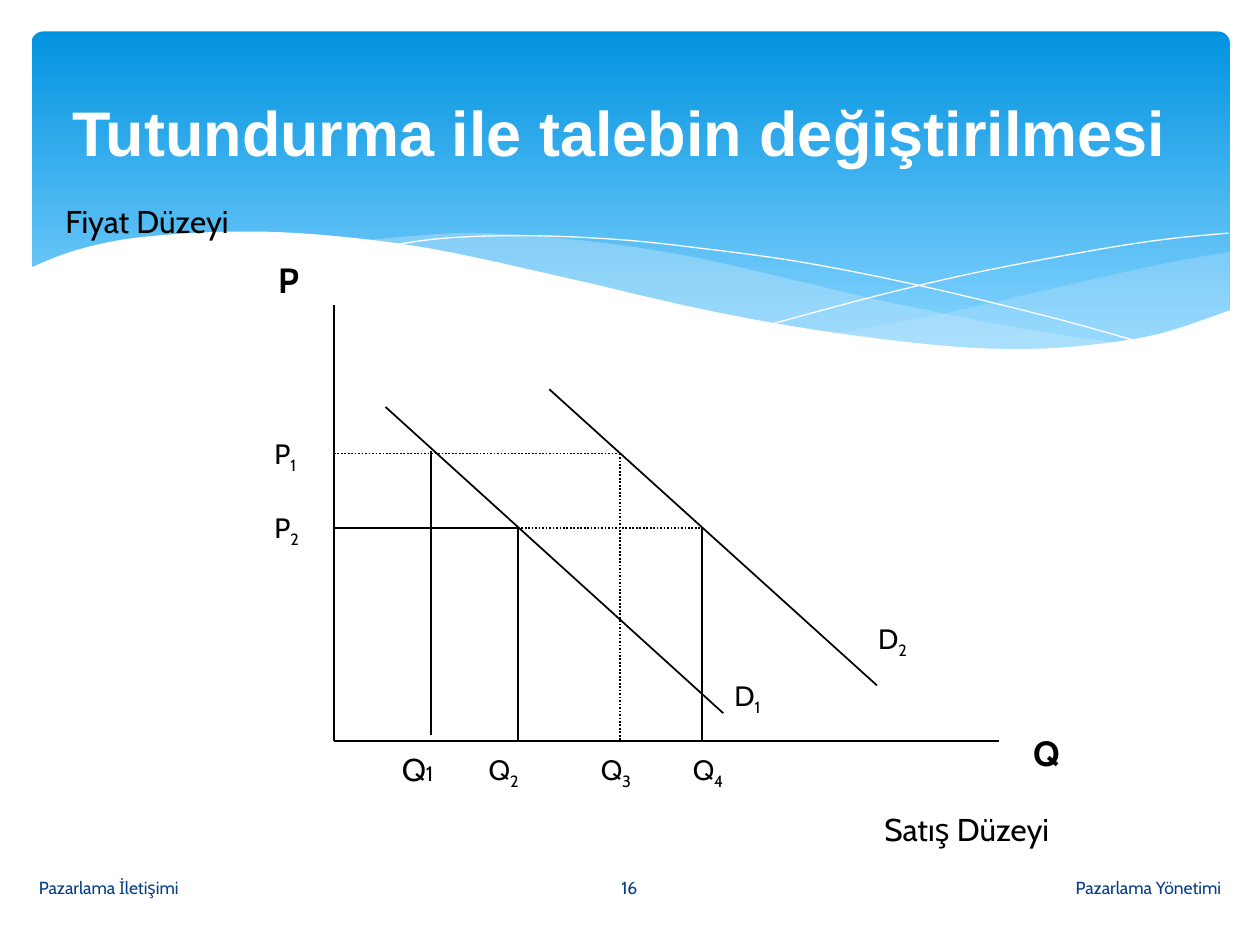
from dataclasses import dataclass
from itertools import chain

from lxml.etree import SubElement
from pptx import Presentation
from pptx.dml.color import RGBColor
from pptx.enum.dml import MSO_LINE
from pptx.enum.shapes import MSO_CONNECTOR, MSO_SHAPE
from pptx.enum.text import MSO_ANCHOR, MSO_AUTO_SIZE, PP_ALIGN
from pptx.oxml.ns import qn
from pptx.util import Inches, Pt


@dataclass(frozen=True)
class Theme:
    """Colours, fonts and type sizes of the slide."""
    white: str = "FFFFFF"
    black: str = "000000"
    sky_top: str = "0293E0"
    sky_bottom: str = "83D3FE"
    wave: str = "C6E7FC"
    footer: str = "073E87"
    title_font: str = "Arial"
    body_font: str = "Cabin"
    title_size: int = 36
    axis_size: int = 20
    caption_size: int = 18
    label_size: int = 16
    small_size: int = 12
    footer_size: int = 10


def set_all(target, values):
    """Set every attribute in the values dict."""
    for name, value in values.items():
        setattr(target, name, value)


def smooth(knots, steps=6):
    """Return points of a Catmull-Rom curve through the knots."""
    padded = [knots[0], *knots, knots[-1]]
    points = [knots[0]]
    for a, b, c, d in zip(padded, padded[1:], padded[2:], padded[3:]):
        for step in range(1, steps + 1):
            t = step / steps
            points.append(tuple(
                0.5 * (2 * q + (r - p) * t + (2 * p - 5 * q + 4 * r - s) * t**2
                       + (3 * q - p - 3 * r + s) * t**3)
                for p, q, r, s in zip(a, b, c, d)))
    return points


class SlideBuilder:
    """Holds the theme and the current slide."""

    def __init__(self, presentation, theme):
        """Add a title-only slide."""
        self.theme = theme
        self.slide = presentation.slides.add_slide(presentation.slide_layouts[5])
        self.shapes = self.slide.shapes

    def style_run(self, run, size, color, font, bold=False):
        """Format one run."""
        set_all(run.font, {"size": Pt(size), "name": font, "bold": bold})
        run.font.color.rgb = RGBColor.from_string(color)

    def banner(self, box):
        """Add the rounded gradient banner."""
        shape = self.shapes.add_shape(MSO_SHAPE.ROUNDED_RECTANGLE, *map(Inches, box))
        shape.adjustments[0] = 0.034
        shape.shadow.inherit = False
        shape.line.fill.background()
        shape.fill.gradient()
        shape.fill.gradient_angle = 270
        stops = ((0, self.theme.sky_top), (0.9, self.theme.sky_bottom))
        for stop, (position, color) in zip(shape.fill.gradient_stops, stops):
            stop.position = position
            stop.color.rgb = RGBColor.from_string(color)

    def curve(self, points, closed):
        """Add a freeform through the points."""
        start, *rest = [(Inches(x), Inches(y)) for x, y in points]
        builder = self.shapes.build_freeform(*start)
        builder.add_line_segments(rest, close=closed)
        shape = builder.convert_to_shape()
        shape.shadow.inherit = False
        return shape

    def wave(self, edges, color, opacity=100):
        """Add a filled wave bounded by smooth edges."""
        shape = self.curve(list(chain.from_iterable(map(smooth, edges))), True)
        shape.line.fill.background()
        shape.fill.solid()
        shape.fill.fore_color.rgb = RGBColor.from_string(color)
        if opacity < 100:
            color_element = shape.element.spPr.find(qn("a:solidFill"))[0]
            SubElement(color_element, qn("a:alpha"), val=str(opacity * 1000))

    def strand(self, knots):
        """Add a white hairline curve."""
        shape = self.curve(smooth(knots), False)
        shape.fill.background()
        shape.line.width = Pt(0)
        shape.line.color.rgb = RGBColor.from_string(self.theme.white)

    def line(self, start, end, dotted=False):
        """Add a straight diagram line."""
        connector = self.shapes.add_connector(
            MSO_CONNECTOR.STRAIGHT, *map(Inches, (*start, *end)))
        connector.line.width = Pt(1)
        connector.line.color.rgb = RGBColor.from_string(self.theme.black)
        if dotted:
            connector.line.dash_style = MSO_LINE.ROUND_DOT
        SubElement(connector.element.spPr, qn("a:effectLst"))

    def title(self, text, box):
        """Fill the title placeholder and bring it before the banner."""
        title = self.shapes.title
        set_all(title, dict(zip(("left", "top", "width", "height"), map(Inches, box))))
        title.text_frame.vertical_anchor = MSO_ANCHOR.MIDDLE
        paragraph = title.text_frame.paragraphs[0]
        paragraph.alignment = PP_ALIGN.CENTER
        run = paragraph.add_run()
        run.text = text
        self.style_run(run, self.theme.title_size, self.theme.white, self.theme.title_font, True)
        title.element.getparent().append(title.element)

    def text(self, text, box, size, color=None, bold=False, align=PP_ALIGN.LEFT, wrap=False):
        """Add a text box and return its paragraph."""
        shape = self.shapes.add_textbox(*map(Inches, box))
        set_all(shape.text_frame, {
            "word_wrap": wrap,
            "vertical_anchor": MSO_ANCHOR.MIDDLE,
            "auto_size": MSO_AUTO_SIZE.NONE if wrap else MSO_AUTO_SIZE.SHAPE_TO_FIT_TEXT,
        })
        paragraph = shape.text_frame.paragraphs[0]
        paragraph.alignment = align
        run = paragraph.add_run()
        run.text = text
        self.style_run(run, size, color or self.theme.black, self.theme.body_font, bold)
        return paragraph

    def label(self, letter, index, box):
        """Add a letter with a subscript index."""
        paragraph = self.text(letter, box, self.theme.label_size)
        run = paragraph.add_run()
        run.text = index
        self.style_run(run, self.theme.label_size, self.theme.black, self.theme.body_font)
        run.font._element.set("baseline", "-25000")


def add_background(builder):
    """Draw the banner and its waves."""
    theme = builder.theme
    builder.banner((0.25, 0.25, 9.51, 2.7))
    builder.wave([
        [(9.76, 2), (9.35, 2.07), (8.61, 2.23), (7.53, 2.48), (6.61, 2.65)],
        [(6.61, 2.65), (7.32, 2.74), (8.03, 2.78), (8.81, 2.73), (9.35, 2.62), (9.76, 2.47)],
    ], theme.wave, 29)
    builder.wave([
        [(8.93, 2.73), (8.07, 2.6), (7.06, 2.4), (6.29, 2.22), (5.55, 2.05),
         (4.89, 1.94), (4.2, 1.87), (3.61, 1.85), (2.86, 1.91)],
        [(2.86, 1.91), (3.62, 2.03), (4.49, 2.22), (5.66, 2.48), (6.5, 2.64),
         (7.22, 2.74), (7.96, 2.78), (8.48, 2.77), (8.93, 2.73)],
    ], theme.wave, 40)
    builder.strand([(3.09, 1.95), (3.53, 1.89), (4.16, 1.87), (4.89, 1.9), (5.56, 1.97),
                    (6.36, 2.08), (7.27, 2.26), (8.31, 2.51), (9.07, 2.72)])
    builder.strand([(6.13, 2.57), (6.95, 2.35), (7.76, 2.16), (8.66, 1.99),
                    (9.24, 1.9), (9.75, 1.85)])
    builder.wave([
        [(9.77, 2.46), (9.2, 2.65), (8.63, 2.74), (8.09, 2.77), (7.44, 2.74),
         (6.48, 2.62), (5.55, 2.45), (4.47, 2.2), (3.4, 1.97), (2.5, 1.86),
         (1.77, 1.84), (1.06, 1.89), (0.59, 1.99), (0.23, 2.13)],
        [(0.23, 3.29), (9.77, 3.29)],
    ], theme.white)


def add_diagram(builder):
    """Draw the axes, demand lines, guides and labels."""
    theme = builder.theme
    axis_x, axis_y = 2.65, 5.88
    price_1, price_2 = 3.6, 4.19
    quantity_1, quantity_2, quantity_3, quantity_4 = 3.42, 4.11, 4.92, 5.57
    for start, end, dotted in (
        ((axis_x, 2.42), (axis_x, axis_y), False),
        ((axis_x, axis_y), (7.93, axis_y), False),
        ((3.06, 3.23), (5.74, 5.66), False),
        ((4.36, 3.09), (6.96, 5.44), False),
        ((axis_x, price_2), (quantity_2, price_2), False),
        ((quantity_2, price_2), (quantity_4, price_2), True),
        ((axis_x, price_1), (quantity_3, price_1), True),
        ((quantity_1, 3.58), (quantity_1, 5.83), False),
        ((quantity_2, price_2), (quantity_2, axis_y), False),
        ((quantity_3, price_1), (quantity_3, axis_y), True),
        ((quantity_4, price_2), (quantity_4, axis_y), False),
    ):
        builder.line(start, end, dotted)
    for letter, index, left, top, width in (
        ("P", "1", 2.08, 3.43, 0.43), ("P", "2", 2.08, 4.02, 0.43),
        ("D", "1", 5.73, 5.35, 0.45), ("D", "2", 6.87, 4.9, 0.45),
        ("Q", "2", 3.78, 5.94, 0.46), ("Q", "3", 4.67, 5.94, 0.46),
        ("Q", "4", 5.4, 5.94, 0.46),
    ):
        builder.label(letter, index, (left, top, width, 0.37))
    first_quantity = builder.text("Q", (3.09, 5.9, 0.49, 0.4), theme.caption_size)
    run = first_quantity.add_run()
    run.text = "1"
    builder.style_run(run, theme.small_size, theme.black, theme.body_font)
    builder.text("P", (2.11, 2, 0.39, 0.43), theme.axis_size, bold=True)
    builder.text("Q", (8.1, 5.76, 0.42, 0.43), theme.axis_size, bold=True)
    builder.text("Fiyat Düzeyi", (0.42, 1.5, 2.59, 0.5), theme.caption_size, wrap=True)
    builder.text("Satış Düzeyi", (6.92, 6.33, 2.07, 0.5), theme.caption_size)


def main():
    """Build and save the slide."""
    presentation = Presentation()
    set_all(presentation, {"slide_width": Inches(10), "slide_height": Inches(7.5)})
    theme = Theme()
    builder = SlideBuilder(presentation, theme)
    add_background(builder)
    builder.title("Tutundurma ile talebin değiştirilmesi", (0.25, 0.5, 9.33, 1.08))
    add_diagram(builder)
    for text, left, width, align in (
        ("Pazarlama İletişimi", 0.21, 4.14, PP_ALIGN.LEFT),
        ("16", 4.36, 1.27, PP_ALIGN.CENTER),
        ("Pazarlama Yönetimi", 5.65, 4.14, PP_ALIGN.RIGHT),
    ):
        builder.text(text, (left, 6.84, width, 0.4), theme.footer_size,
                     theme.footer, align=align, wrap=True)
    presentation.save("out.pptx")


if __name__ == "__main__":
    main()
